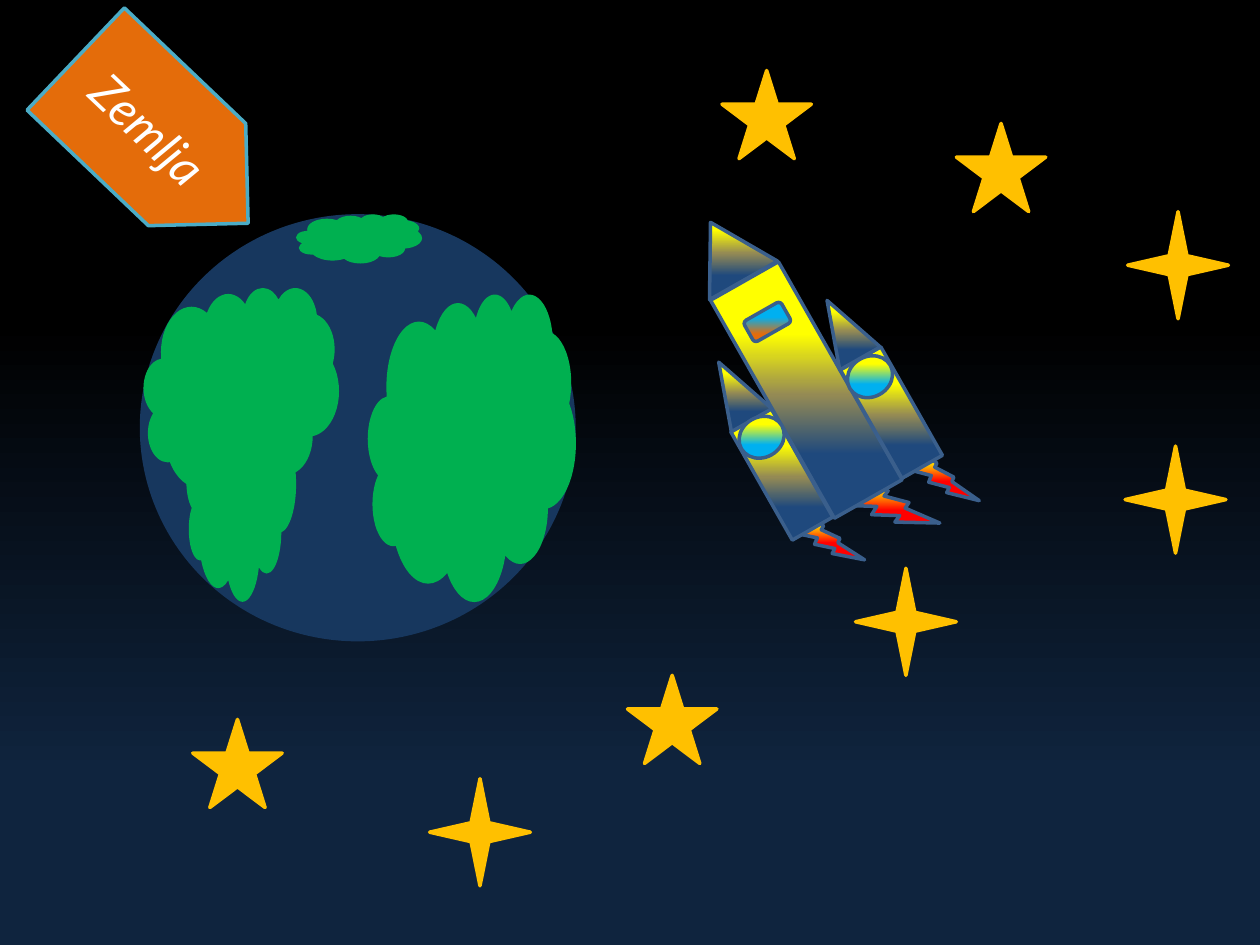
import pptx
import pptx.util
import pptx.dml.color
import pptx.enum.shapes
import pptx.enum.text
import pptx.oxml.ns
import lxml.etree

Inches = pptx.util.Inches
RGBColor = pptx.dml.color.RGBColor
SHAPE = pptx.enum.shapes.MSO_SHAPE
qn = pptx.oxml.ns.qn

BLACK = RGBColor(0x00, 0x00, 0x00)
NIGHT = RGBColor(0x0F, 0x24, 0x3E)
OCEAN = RGBColor(0x17, 0x37, 0x5E)
LAND = RGBColor(0x00, 0xB0, 0x50)
YELLOW = RGBColor(0xFF, 0xFF, 0x00)
RED = RGBColor(0xFF, 0x00, 0x00)
KHAKI = RGBColor(0x94, 0x8A, 0x54)
NAVY = RGBColor(0x1F, 0x49, 0x7D)
SKY = RGBColor(0x00, 0xB0, 0xF0)
ORANGE = RGBColor(0xE4, 0x6C, 0x0A)
OUTLINE = RGBColor(0x3A, 0x5F, 0x8C)
GOLD = RGBColor(0xFF, 0xC0, 0x00)
TEAL = RGBColor(0x4B, 0xAC, 0xC6)
WHITE = RGBColor(0xFF, 0xFF, 0xFF)

FLAME = [(28, YELLOW), (52, RED)]
HULL = [(28, YELLOW), (52, KHAKI), (75, NAVY)]
WINDOW = [(39, SKY), (79, ORANGE)]
PORTHOLE = [(28, YELLOW), (63, SKY)]
ROCKET_ROTATION = 330.4


def set_gradient(fill, element, stops):
    fill.gradient()
    fill.gradient_angle = 270
    gradient = element.find(".//" + qn("a:gradFill"))
    gradient.set("rotWithShape", "0")
    stop_list = gradient.find(qn("a:gsLst"))
    for stop in list(stop_list):
        stop_list.remove(stop)
    for position, color in stops:
        stop = lxml.etree.SubElement(stop_list, qn("a:gs"), pos=str(position * 1000))
        lxml.etree.SubElement(stop, qn("a:srgbClr"), val=str(color))


def add_shape(shapes, kind, left, top, width, height, fill, line=None):
    shape = shapes.add_shape(kind, Inches(left), Inches(top), Inches(width), Inches(height))
    shape.shadow.inherit = False
    if isinstance(fill, list):
        set_gradient(shape.fill, shape._element.spPr, fill)
    else:
        shape.fill.solid()
        shape.fill.fore_color.rgb = fill
    if line is None:
        shape.line.fill.background()
    else:
        shape.line.color.rgb = line
        shape.line.width = pptx.util.Pt(2)
    return shape


presentation = pptx.Presentation()
presentation.slide_width = Inches(10)
presentation.slide_height = Inches(7.5)
slide = presentation.slides.add_slide(presentation.slide_layouts[6])
set_gradient(slide.background.fill, slide._element, [(34, BLACK), (82, NIGHT)])

earth = slide.shapes.add_group_shape()
add_shape(earth.shapes, SHAPE.OVAL, 1.11, 1.7, 3.46, 3.39, OCEAN)
for box in [
    (2.92, 2.33, 1.65, 2.44),
    (1.14, 2.28, 1.55, 1.69),
    (1.48, 2.96, 0.87, 1.81),
    (2.35, 1.7, 1, 0.39),
]:
    add_shape(earth.shapes, SHAPE.CLOUD, *box, LAND)

rocket = slide.shapes.add_group_shape()
rocket_parts = [
    (SHAPE.LIGHTNING_BOLT, FLAME, [
        (7.29, 3.51, 0.36, 0.59), (6.78, 3.74, 0.57, 0.59), (6.38, 4.02, 0.37, 0.55)]),
    (SHAPE.RECTANGLE, HULL, [
        (6.02, 3.27, 0.37, 0.99), (6.09, 2.1, 0.62, 1.99), (6.89, 2.78, 0.37, 0.99)]),
    (SHAPE.ISOSCELES_TRIANGLE, HULL, [
        (5.46, 1.73, 0.62, 0.53), (5.65, 2.84, 0.37, 0.53), (6.51, 2.35, 0.37, 0.53)]),
    (SHAPE.ROUNDED_RECTANGLE, WINDOW, [(5.92, 2.46, 0.34, 0.19)]),
    (SHAPE.OVAL, PORTHOLE, [(6.72, 2.83, 0.37, 0.32), (5.86, 3.31, 0.37, 0.32)]),
]
for kind, fill, boxes in rocket_parts:
    for box in boxes:
        part = add_shape(rocket.shapes, kind, *box, fill, OUTLINE)
        part.rotation = ROCKET_ROTATION

stars = slide.shapes.add_group_shape()
star_kinds = [
    (SHAPE.STAR_5_POINT, 0.71, 0.7, [(7.59, 0.98), (4.98, 5.36), (1.53, 5.71), (5.73, 0.56)]),
    (SHAPE.STAR_4_POINT, 0.8, 0.85, [(3.41, 6.18), (8.95, 1.68), (6.79, 4.51), (8.93, 3.54)]),
]
for kind, width, height, positions in star_kinds:
    for left, top in positions:
        add_shape(stars.shapes, kind, left, top, width, height, GOLD, GOLD)

label = add_shape(slide.shapes, SHAPE.PENTAGON, 0.34, 0.56, 1.89, 1.12, ORANGE, TEAL)
label.rotation = 43.6
label.text_frame.vertical_anchor = pptx.enum.text.MSO_ANCHOR.MIDDLE
paragraph = label.text_frame.paragraphs[0]
paragraph.text = "Zemlja"
paragraph.alignment = pptx.enum.text.PP_ALIGN.CENTER
paragraph.font.name = "Lato"
paragraph.font.size = pptx.util.Pt(28)
paragraph.font.italic = True
paragraph.font.color.rgb = WHITE

presentation.save("out.pptx")
